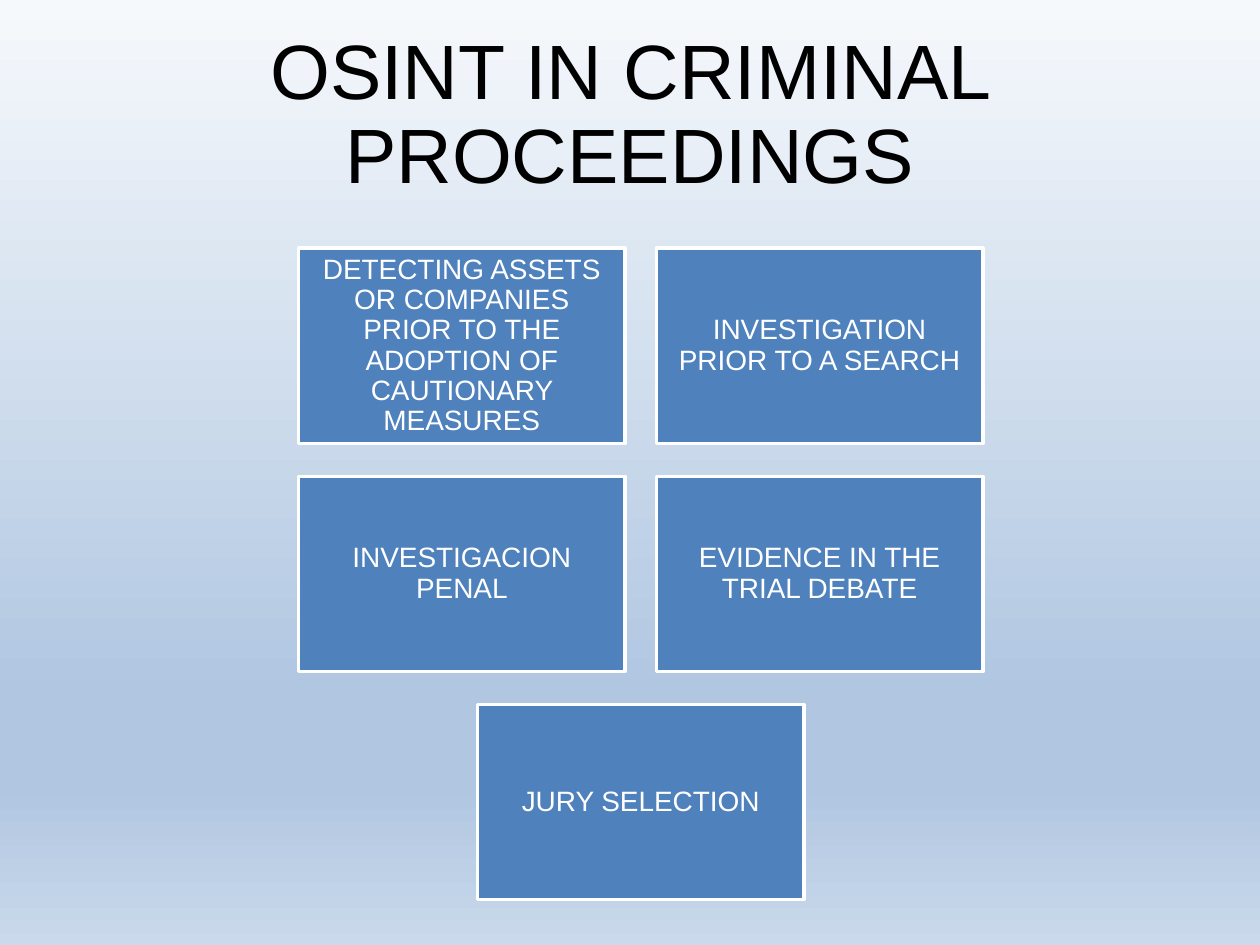
from lxml.etree import SubElement
from pptx import Presentation
from pptx.dml.color import RGBColor
from pptx.enum.shapes import MSO_SHAPE
from pptx.enum.text import MSO_ANCHOR, PP_ALIGN
from pptx.oxml.ns import qn
from pptx.util import Inches, Pt

COLORS = {"title": "000000", "box": "4F81BD", "light": "FFFFFF"}
BACKGROUND_STOPS = [(0, "F6F9FC"), (74, "B0C6E1"), (83, "B0C6E1"), (100, "CAD9EB")]

# Grid of topics: inches
LEFT, TOP = 2.37, 1.97
BOX_WIDTH, BOX_HEIGHT = 2.59, 1.55
COLUMN_STEP, ROW_STEP = 2.84, 1.81

# Text, column, row; the last box is centred below the two columns
TOPICS = [
    ("DETECTING ASSETS OR COMPANIES PRIOR TO THE ADOPTION OF CAUTIONARY MEASURES", 0, 0),
    ("INVESTIGATION PRIOR TO A SEARCH", 1, 0),
    ("INVESTIGACION PENAL", 0, 1),
    ("EVIDENCE IN THE TRIAL DEBATE", 1, 1),
    ("JURY SELECTION", 0.5, 2),
]


def color(name):
    return RGBColor.from_string(COLORS[name])


def set_values(target, values):
    for name, value in values.items():
        setattr(target, name, value)


def paint_background(page):
    fill = page.background.fill
    fill.gradient()
    fill.gradient_angle = 270
    # A gradient with more than two stops needs its stop list rewritten
    stops = page.background._cSld.find(".//" + qn("a:gsLst"))
    for stop in list(stops):
        stops.remove(stop)
    for position, hex_color in BACKGROUND_STOPS:
        stop = SubElement(stops, qn("a:gs"), pos=str(position * 1000))
        SubElement(stop, qn("a:srgbClr"), val=hex_color)


def write_text(shape, text, size, color_name, margin):
    frame = shape.text_frame
    frame.text = text
    sides = ("left", "top", "right", "bottom")
    set_values(frame, {f"margin_{side}": Inches(margin) for side in sides})
    set_values(frame, {"word_wrap": True, "vertical_anchor": MSO_ANCHOR.MIDDLE})
    para = frame.paragraphs[0]
    set_values(para, {"alignment": PP_ALIGN.CENTER, "line_spacing": 0.9})
    font = para.runs[0].font
    set_values(font, {"name": "Arial", "size": Pt(size)})
    font.color.rgb = color(color_name)


def add_title(page, text):
    title = page.shapes.title
    set_values(title, {"left": Inches(0.5), "top": Inches(0.26),
                       "width": Inches(9), "height": Inches(1.33)})
    write_text(title, text, 44, "title", 0)


def add_topic(page, text, column, row):
    box = page.shapes.add_shape(
        MSO_SHAPE.RECTANGLE,
        Inches(LEFT + column * COLUMN_STEP), Inches(TOP + row * ROW_STEP),
        Inches(BOX_WIDTH), Inches(BOX_HEIGHT))
    box.shadow.inherit = False
    box.fill.solid()
    box.fill.fore_color.rgb = color("box")
    box.line.color.rgb = color("light")
    box.line.width = Pt(2)
    write_text(box, text, 16, "light", 0.07)


def main():
    deck = Presentation()
    set_values(deck, {"slide_width": Inches(10), "slide_height": Inches(7.5)})
    page = deck.slides.add_slide(deck.slide_layouts[5])
    paint_background(page)
    add_title(page, "OSINT IN CRIMINAL PROCEEDINGS")
    for text, column, row in TOPICS:
        add_topic(page, text, column, row)
    deck.save("out.pptx")


if __name__ == "__main__":
    main()
